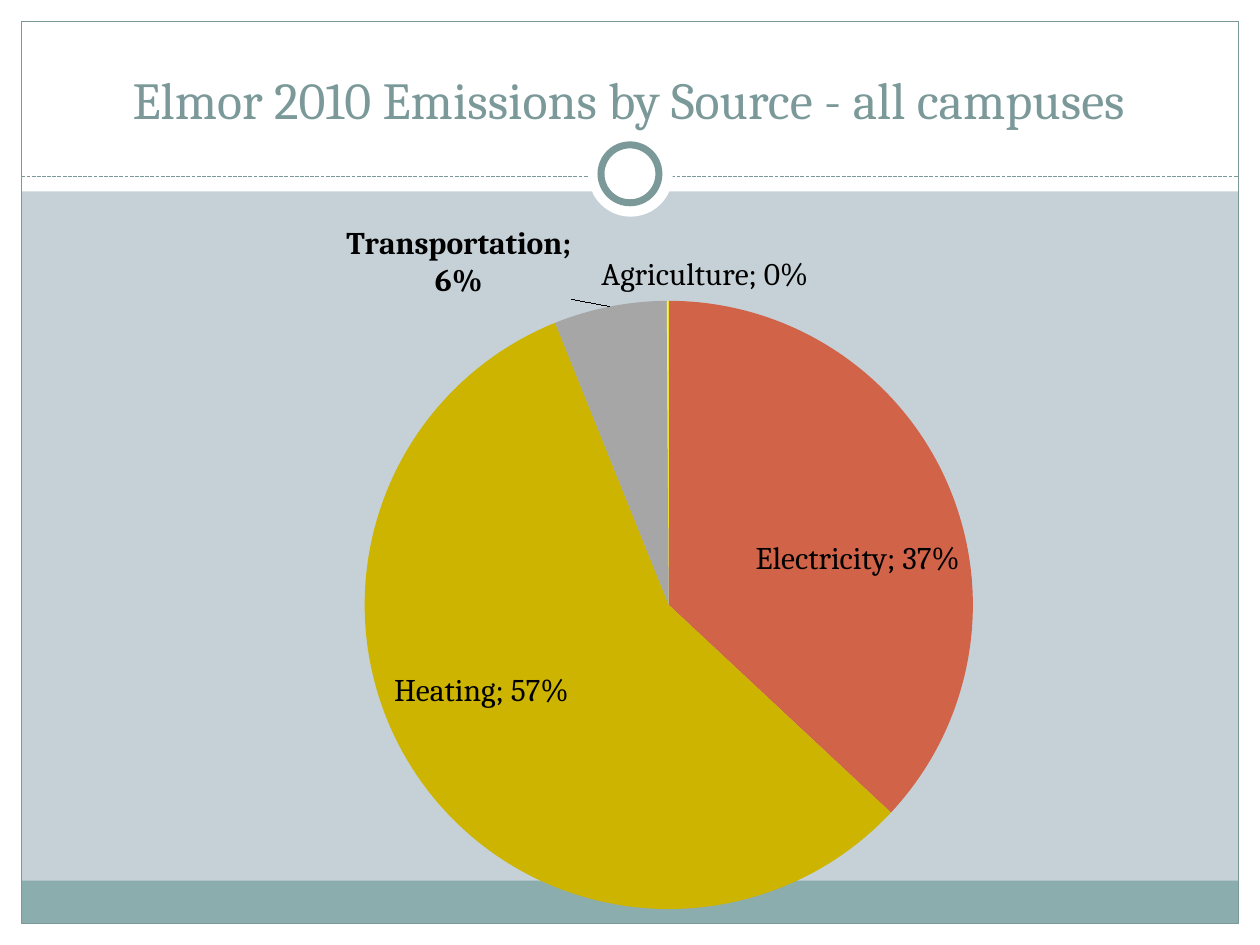
from dataclasses import dataclass

import pptx
import pptx.chart.data
import pptx.dml.color
import pptx.enum.chart
import pptx.enum.dml
import pptx.enum.shapes
import pptx.enum.text
import pptx.oxml
import pptx.oxml.ns
import pptx.util
from pptx.util import Inches

FONT = "Cambria"
COLORS = {
    "background": "C5D1D7", "white": "FFFFFF", "band": "8CADAE",
    "accent": "7C999A", "text": "000000", "electricity": "D16349",
    "heating": "CCB400", "transportation": "A6A6A6", "agriculture": "FFFF00",
}
SHAPE = pptx.enum.shapes.MSO_SHAPE
LABEL = pptx.enum.chart.XL_LABEL_POSITION
qn = pptx.oxml.ns.qn


@dataclass
class Panel:
    left: float
    top: float
    width: float
    height: float
    fill: str | None = "white"
    line_width: float = 0
    kind: SHAPE = SHAPE.RECTANGLE


@dataclass
class Source:
    name: str
    share: float
    position: LABEL
    shift_x: float = 0  # label offsets, as fractions of the chart
    shift_y: float = 0
    bold: bool = False


FRAME = [
    Panel(0, 7.33, 10, 0.17),
    Panel(0, 0, 10, 1.52),
    Panel(0, 0, 0.17, 7.5),
    Panel(9.83, 0, 0.17, 7.5),
    Panel(0.17, 6.99, 9.66, 0.34, "band"),
    Panel(0.17, 0.17, 9.66, 7.16, None, 0.75),
]
RING = [
    Panel(4.67, 1.05, 0.67, 0.67, kind=SHAPE.OVAL),
    Panel(4.77, 1.15, 0.46, 0.46, line_width=4, kind=SHAPE.OVAL),
]
SOURCES = [
    Source("Electricity", 0.37, LABEL.CENTER, 0.04, 0.02),
    Source("Heating", 0.57, LABEL.CENTER, -0.05),
    Source("Transportation", 0.06, LABEL.OUTSIDE_END, -0.03, bold=True),
    # A thin sliver that rounds to 0%; an exact zero would not be drawn
    Source("Agriculture", 0.001, LABEL.OUTSIDE_END, 0.03),
]


def rgb(name: str) -> pptx.dml.color.RGBColor:
    return pptx.dml.color.RGBColor.from_string(COLORS[name])


def chart_xml(tag: str, content: str = "", attributes: str = ""):
    namespace = pptx.oxml.ns.nsdecls("c")
    return pptx.oxml.parse_xml(f"<c:{tag} {namespace} {attributes}>{content}</c:{tag}>")


def manual_layout(**values: float | str):
    fields = "".join(f'<c:{key} val="{value}"/>' for key, value in values.items())
    return chart_xml("layout", f"<c:manualLayout>{fields}</c:manualLayout>")


def draw_panel(slide, panel: Panel) -> None:
    shape = slide.shapes.add_shape(
        panel.kind, Inches(panel.left), Inches(panel.top),
        Inches(panel.width), Inches(panel.height))
    shape.shadow.inherit = False
    if panel.fill:
        shape.fill.solid()
        shape.fill.fore_color.rgb = rgb(panel.fill)
    else:
        shape.fill.background()
    if panel.line_width:
        shape.line.color.rgb = rgb("accent")
        shape.line.width = pptx.util.Pt(panel.line_width)
    else:
        shape.line.fill.background()


def draw_divider(slide) -> None:
    divider = slide.shapes.add_connector(
        pptx.enum.shapes.MSO_CONNECTOR.STRAIGHT,
        Inches(0.17), Inches(1.4), Inches(9.83), Inches(1.4))
    divider.line.color.rgb = rgb("accent")
    divider.line.width = pptx.util.Pt(0.75)
    divider.line.dash_style = pptx.enum.dml.MSO_LINE.SQUARE_DOT
    namespace = pptx.oxml.ns.nsdecls("a")
    divider.element.spPr.append(pptx.oxml.parse_xml(f"<a:effectLst {namespace}/>"))


def draw_title(slide) -> None:
    title = slide.shapes.title
    title.left, title.top = Inches(0.33), Inches(0.25)
    title.width, title.height = Inches(9.33), Inches(0.83)
    title.text = "Elmor 2010 Emissions by Source - all campuses"
    title.text_frame.vertical_anchor = pptx.enum.text.MSO_ANCHOR.BOTTOM
    title.text_frame.auto_size = pptx.enum.text.MSO_AUTO_SIZE.NONE
    heading = title.text_frame.paragraphs[0]
    heading.alignment = pptx.enum.text.PP_ALIGN.CENTER
    heading.font.name = FONT
    heading.font.size = pptx.util.Pt(29.7)
    heading.font.color.rgb = rgb("accent")
    slide.shapes.element.append(title.element)  # in front of the frame


def format_slice(point, source: Source) -> None:
    point.format.fill.solid()
    point.format.fill.fore_color.rgb = rgb(source.name.lower())
    point.format.line.fill.background()
    label = point.data_label
    label.position = source.position
    label.font.name = FONT
    label.font.size = pptx.util.Pt(18)
    label.font.bold = source.bold
    label.font.color.rgb = rgb("text")


def finish_label(label, source: Source) -> None:
    """Show category and share, and move the label off its default place."""
    for tag, shown in (("showVal", "1"), ("showCatName", "1"), ("showPercent", "0")):
        label.find(qn(f"c:{tag}")).set("val", shown)
    label.insert(1, manual_layout(x=source.shift_x, y=source.shift_y))
    label.insert(2, chart_xml("numFmt", attributes='formatCode="0%" sourceLinked="0"'))
    label.append(chart_xml("separator", "; "))


def draw_emissions(slide) -> None:
    data = pptx.chart.data.CategoryChartData(number_format="0%")
    data.categories = [source.name for source in SOURCES]
    data.add_series("Series 1", [source.share for source in SOURCES])
    chart = slide.shapes.add_chart(
        pptx.enum.chart.XL_CHART_TYPE.PIE, Inches(0), Inches(1.65),
        Inches(9.83), Inches(5.68), data).chart
    chart.has_legend = False
    chart.has_title = False
    chart.font.name = FONT
    chart.font.size = pptx.util.Pt(10)
    chart.font.color.rgb = rgb("text")

    emissions = chart.plots[0]
    emissions.vary_by_categories = True
    shares = emissions.series[0]
    for index, source in enumerate(SOURCES):
        format_slice(shares.points[index], source)
    labels = shares.data_labels._element.findall(qn("c:dLbl"))
    for label, source in zip(labels, SOURCES):
        finish_label(label, source)

    # Fixed place for the pie
    plot_area = chart._chartSpace.chart.plotArea
    for automatic in plot_area.findall(qn("c:layout")):
        plot_area.remove(automatic)
    plot_area.insert(0, manual_layout(
        layoutTarget="inner", xMode="edge", yMode="edge",
        x=0.29, y=0.13, w=0.5, h=0.85))


def main() -> None:
    deck = pptx.Presentation()
    deck.slide_width, deck.slide_height = Inches(10), Inches(7.5)
    slide = deck.slides.add_slide(deck.slide_layouts[5])
    slide.background.fill.solid()
    slide.background.fill.fore_color.rgb = rgb("background")

    # Frame, divider and ring
    for panel in FRAME:
        draw_panel(slide, panel)
    draw_divider(slide)
    for panel in RING:
        draw_panel(slide, panel)

    # Content
    draw_title(slide)
    draw_emissions(slide)
    deck.save("out.pptx")


if __name__ == "__main__":
    main()
